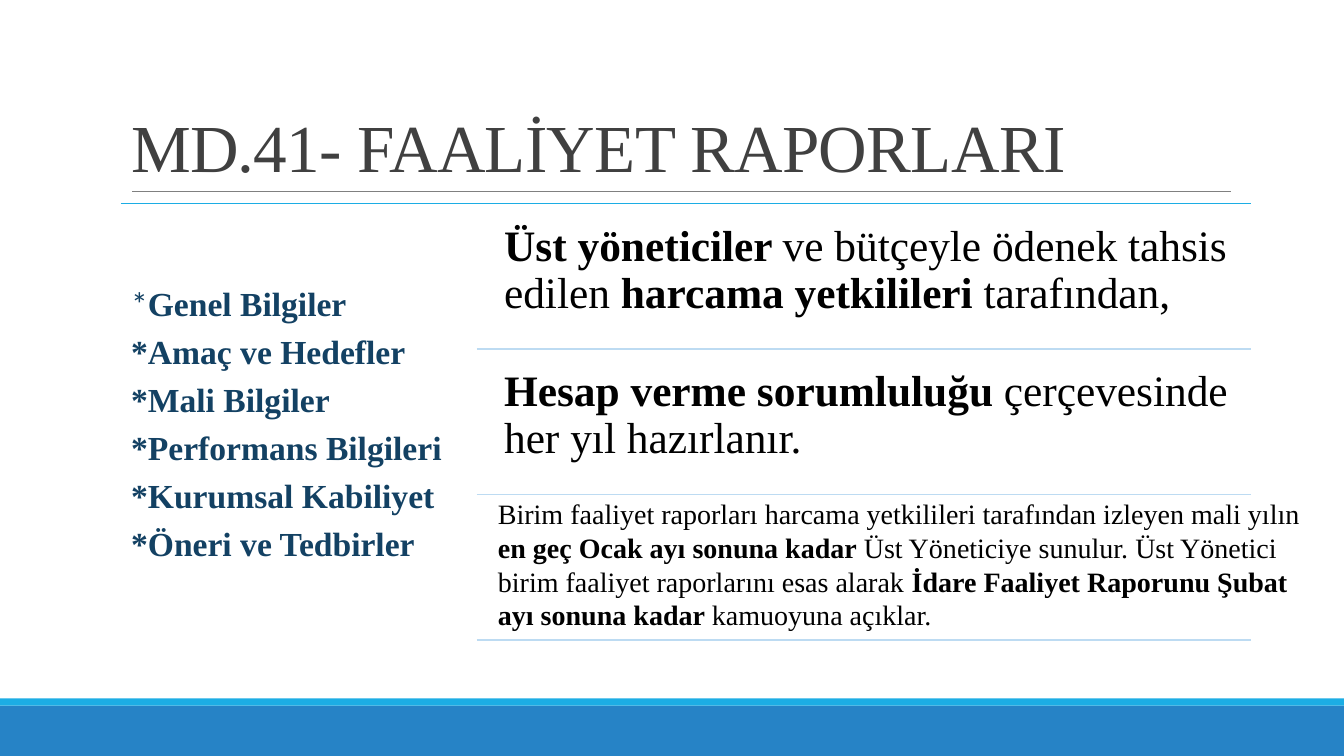
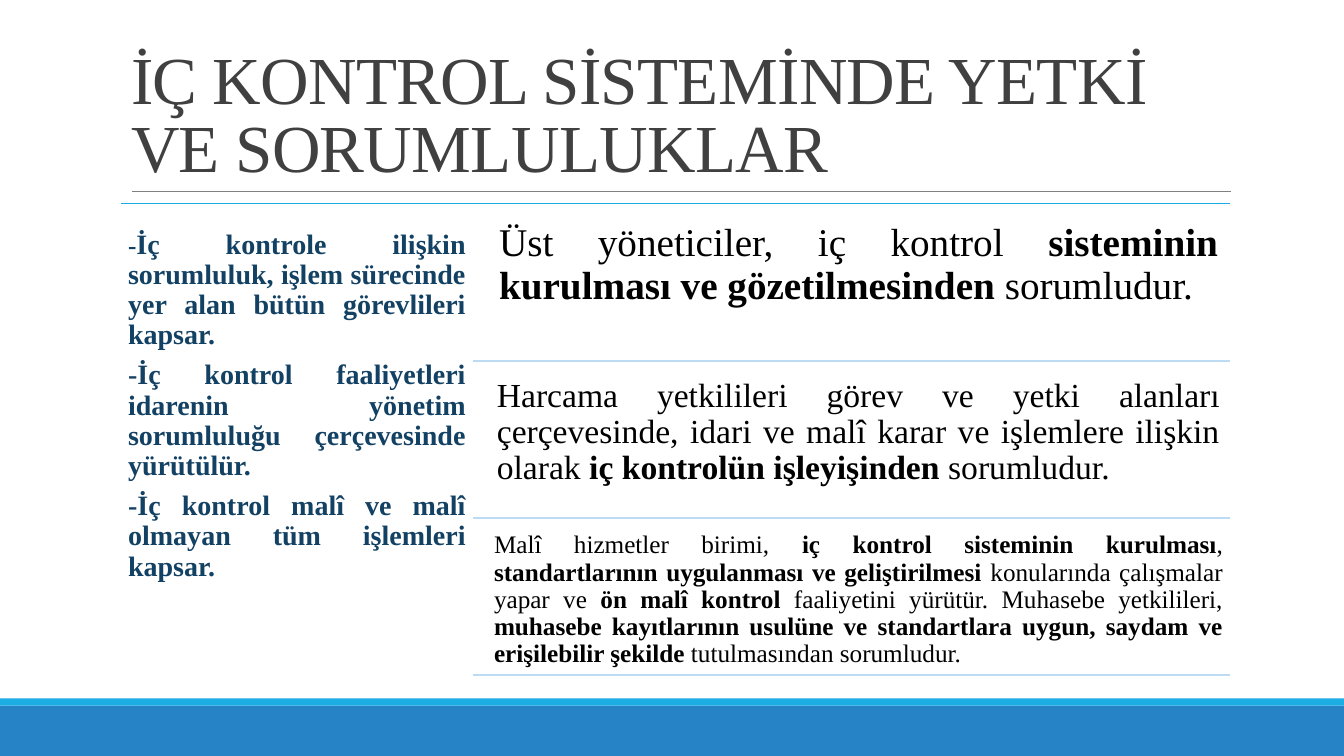
"""Build two slides on activity reports and internal control duties."""
from lxml import etree
from pptx import Presentation
from pptx.dml.color import RGBColor
from pptx.enum.shapes import MSO_CONNECTOR, MSO_SHAPE
from pptx.enum.text import MSO_ANCHOR, MSO_AUTO_SIZE, PP_ALIGN
from pptx.oxml.ns import qn
from pptx.util import Inches, Pt

BLUE = RGBColor(0x26, 0x83, 0xC6)
CYAN = RGBColor(0x1C, 0xAD, 0xE4)
PALE = RGBColor(0xBD, 0xDB, 0xF2)
NAVY = RGBColor(0x13, 0x41, 0x63)
GRAY = RGBColor(0x80, 0x80, 0x80)
DARK = RGBColor(0x40, 0x40, 0x40)
BLACK = RGBColor(0, 0, 0)
SERIF = "Times New Roman"

WIDTH, HEIGHT = 13.33, 7.5
LEFT, TOP = 1.2, 2.02
GAP, INDENT = 0.07, 0.14

CONTENTS = [
    {
        "title": "MD.41- FAALİYET RAPORLARI",
        "right": 12.41, "split": 4.73, "bottom": 6.35,
        "align": PP_ALIGN.LEFT, "anchor": MSO_ANCHOR.MIDDLE,
        "list_size": 24, "margins": (0.1, 0.1), "mark": ("Calibri", 24, False),
        "items": ["*Genel Bilgiler", "*Amaç ve Hedefler", "*Mali Bilgiler",
                  "*Performans Bilgileri", "*Kurumsal Kabiliyet",
                  "*Öneri ve Tedbirler"],
        "rows": [
            (31, 0.13, "**Üst yöneticiler **ve bütçeyle ödenek tahsis edilen "
                       "**harcama yetkilileri **tarafından,"),
            (31, 0.13, "**Hesap verme sorumluluğu **çerçevesinde her yıl hazırlanır."),
        ],
    },
    {
        "title": "İÇ KONTROL SİSTEMİNDE YETKİ VE SORUMLULUKLAR",
        "right": 12.2, "split": 4.69, "bottom": 6.7,
        "align": PP_ALIGN.JUSTIFY, "anchor": MSO_ANCHOR.TOP,
        "list_size": 20, "margins": (0.07, 0.26), "mark": (SERIF, 18, True),
        "items": ["-İç kontrole ilişkin sorumluluk, işlem sürecinde yer alan "
                  "bütün görevlileri kapsar.",
                  "-İç kontrol faaliyetleri idarenin yönetim sorumluluğu "
                  "çerçevesinde yürütülür.",
                  "-İç kontrol malî ve malî olmayan tüm işlemleri kapsar."],
        "rows": [
            (28, 0.12, "Üst yöneticiler, iç kontrol **sisteminin kurulması ve "
                       "gözetilmesinden** sorumludur."),
            (24, 0.1, "Harcama yetkilileri görev ve yetki alanları çerçevesinde, "
                      "idari ve malî karar ve işlemlere ilişkin olarak "
                      "**iç kontrolün işleyişinden **sorumludur."),
            (18, 0.07, "Malî hizmetler birimi, **iç kontrol sisteminin kurulması**, "
                       "**standartlarının uygulanması ve geliştirilmesi** konularında "
                       "çalışmalar yapar ve **ön malî kontrol **faaliyetini yürütür. "
                       "Muhasebe yetkilileri, **muhasebe kayıtlarının usulüne ve "
                       "standartlara uygun, saydam ve erişilebilir şekilde** "
                       "tutulmasından sorumludur."),
        ],
    },
]
REPORT_DATES = (
    "Birim faaliyet raporları harcama yetkilileri tarafından izleyen mali yılın "
    "**en geç Ocak ayı sonuna kadar **Üst Yöneticiye sunulur. Üst Yönetici birim "
    "faaliyet raporlarını esas alarak **İdare Faaliyet Raporunu Şubat ayı sonuna "
    "kadar **kamuoyuna açıklar.")


def add_rule(s, x1, x2, y, color, weight):
    line = s.shapes.add_connector(MSO_CONNECTOR.STRAIGHT, Inches(x1), Inches(y),
                                  Inches(x2), Inches(y))
    line.line.color.rgb = color
    line.line.width = Pt(weight)
    etree.SubElement(line.element.find(qn("p:spPr")), qn("a:effectLst"))
    return line


def add_text(s, box, margins, size, text, align, spacing):
    tf = s.shapes.add_textbox(*map(Inches, box)).text_frame
    tf.word_wrap = True
    tf.margin_left = tf.margin_right = Inches(margins[0])
    tf.margin_top = tf.margin_bottom = Inches(margins[1])
    p = tf.paragraphs[0]
    p.alignment, p.line_spacing = align, spacing
    p.font.name, p.font.size, p.font.color.rgb = SERIF, Pt(size), BLACK
    for i, part in enumerate(text.split("**")):
        if part:
            r = p.add_run()
            r.text, r.font.bold = part, i % 2 == 1


prs = Presentation()
prs.slide_width, prs.slide_height = Inches(WIDTH), Inches(HEIGHT)
layout = prs.slide_layouts[1]
for ph in list(layout.placeholders)[2:]:
    ph.element.getparent().remove(ph.element)
title = layout.placeholders[0]
title.left, title.top = Inches(LEFT), Inches(0.31)
title.width, title.height = Inches(11), Inches(1.59)

slides = [prs.slides.add_slide(layout) for _ in CONTENTS]
for y, height, color in [(7, 0.5, BLUE), (6.93, 0.07, CYAN)]:
    band = slides[0].shapes.add_shape(MSO_SHAPE.RECTANGLE, 0, Inches(y),
                                      prs.slide_width, Inches(height))
    band.shadow.inherit = False
    band.fill.solid()
    band.fill.fore_color.rgb = color
    band.line.fill.background()
    layout.shapes.element.append(band.element)
title_rule = add_rule(slides[0], 1.31, 12.21, 1.9, GRAY, 0.5)
layout.shapes.element.append(title_rule.element)

for s, c in zip(slides, CONTENTS):
    title, body = s.placeholders
    tf = title.text_frame
    tf.text = c["title"]
    tf.auto_size, tf.word_wrap = MSO_AUTO_SIZE.NONE, True
    tf.vertical_anchor = MSO_ANCHOR.BOTTOM
    p = tf.paragraphs[0]
    p.alignment, p.line_spacing = PP_ALIGN.LEFT, 0.85
    p.font.name, p.font.size, p.font.color.rgb = SERIF, Pt(48), DARK
    for props in title.element.iter(qn("a:defRPr")):
        props.set("spc", "-50")

    body.left, body.top = Inches(LEFT), Inches(TOP)
    body.width = Inches(c["split"] - LEFT)
    body.height = Inches(c["bottom"] - TOP + GAP)
    tf = body.text_frame
    tf.auto_size, tf.word_wrap = MSO_AUTO_SIZE.NONE, True
    tf.vertical_anchor = c["anchor"]
    tf.margin_left = tf.margin_right = Inches(c["margins"][0])
    tf.margin_top = tf.margin_bottom = Inches(c["margins"][1])
    for i, item in enumerate(c["items"]):
        p = tf.add_paragraph() if i else tf.paragraphs[0]
        p.alignment, p.line_spacing = c["align"], 0.9
        p.space_before, p.space_after = Pt(0), Pt(0.35 * c["list_size"])
        p.font.name, p.font.size = SERIF, Pt(c["list_size"])
        p.font.bold, p.font.color.rgb = True, NAVY
        for part in [item] if i else [item[0], item[1:]]:
            p.add_run().text = part
    mark = tf.paragraphs[0].runs[0].font
    mark.name, mark.size, mark.bold = c["mark"][0], Pt(c["mark"][1]), c["mark"][2]
    for props in body.element.iter(qn("a:pPr")):
        props.set("marL", "0")
        props.set("indent", "0")
        props.find(qn("a:defRPr")).addprevious(etree.Element(qn("a:buNone")))

    add_rule(s, LEFT, c["right"], TOP, CYAN, 1.25)
    pitch = (c["bottom"] - TOP) / 3
    for i in range(3):
        add_rule(s, c["split"], c["right"], TOP + (i + 1) * pitch, PALE, 1.25)
    x = c["split"] + INDENT
    for i, (size, margin, text) in enumerate(c["rows"]):
        box = (x, TOP + GAP + i * pitch, c["right"] - x, pitch - GAP)
        add_text(s, box, (margin, margin), size, text, c["align"], 0.9)

add_text(slides[0], (4.84, 4.88, 8.34, 1.45), (0.1, 0.05), 20, REPORT_DATES,
         PP_ALIGN.LEFT, 1.0)

prs.save("out.pptx")
